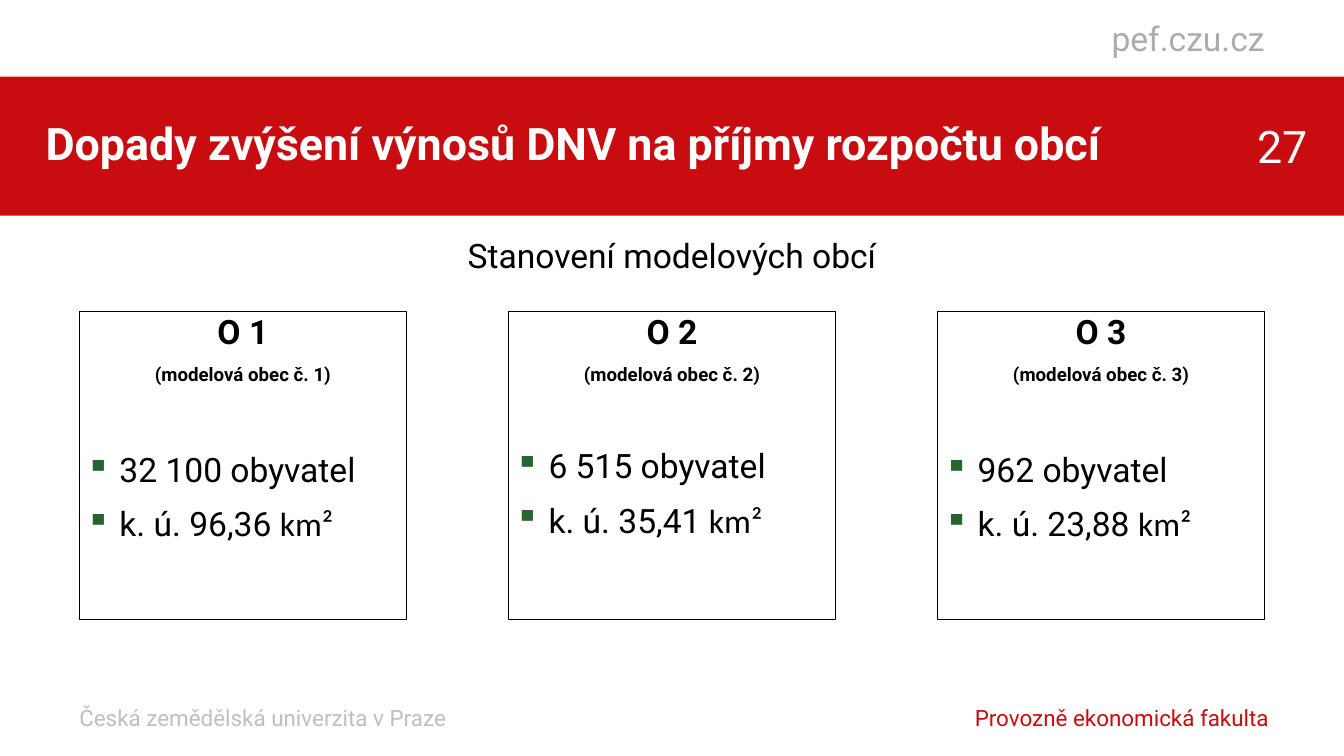
from lxml import etree
from pptx import Presentation
from pptx.dml.color import RGBColor
from pptx.enum.shapes import MSO_SHAPE
from pptx.enum.text import MSO_ANCHOR, PP_ALIGN
from pptx.oxml.ns import qn
from pptx.util import Inches, Pt

LEFT, CENTER, RIGHT = PP_ALIGN.LEFT, PP_ALIGN.CENTER, PP_ALIGN.RIGHT
TOP, MIDDLE = MSO_ANCHOR.TOP, MSO_ANCHOR.MIDDLE
RECTANGLE = MSO_SHAPE.RECTANGLE

THEME = {
    "font": "Roboto", "unit_font": "Calibri",
    "red": "C80C0F", "white": "FFFFFF", "black": "000000",
    "site": "AFABAB", "footer": "BFBFBF", "bullet": "28642D",
    "title": 48, "body": 36, "small": 24, "caption": 20,
    "line_spacing": 0.9, "space_before": 15,
}

# text, (left, top, width, height), size, colour, alignment, anchor, has margins, bold
LABELS = [
    ("pef.czu.cz", (15.48, 0, 3.34, 1.14), "body", "site", RIGHT, MIDDLE, False, False),
    ("Česká zemědělská univerzita v Praze", (1.18, 10.11, 5.85, 1.14),
     "small", "footer", LEFT, MIDDLE, False, False),
    ("Provozně ekonomická fakulta", (10.19, 10.11, 8.69, 1.14),
     "small", "red", RIGHT, MIDDLE, False, False),
    ("27", (17.63, 1.72, 1.93, 0.91), "title", "white", RIGHT, TOP, True, False),
    ("Dopady zvýšení výnosů DNV na příjmy rozpočtu obcí", (0.58, 1.14, 17.27, 2.07),
     "title", "white", LEFT, MIDDLE, True, True),
    ("Stanovení modelových obcí", (1.18, 3.51, 17.64, 0.85),
     "body", "black", CENTER, TOP, True, False),
]

# heading, caption, inhabitants, area, points above the bullets
MUNICIPALITIES = [
    ("O 1", "(modelová obec č. 1)", "32 100 obyvatel", "k. ú. 96,36 ", 68),
    ("O 2", "(modelová obec č. 2)", "6 515 obyvatel", "k. ú. 35,41 ", 64),
    ("O 3", "(modelová obec č. 3)", "962 obyvatel", "k. ú. 23,88 ", 68),
]
AREA_UNIT = "km²"
BANNER = (0, 1.14, 20, 2.07)
BOX_LEFT, BOX_TOP, BOX_WIDTH, BOX_HEIGHT = 1.18, 4.64, 4.87, 4.58
BOX_PITCH = 6.385
BULLET_INDENT = 0.5


def color(name):
    return RGBColor.from_string(THEME[name])


def style(paragraph, size, color_name="black", alignment=LEFT, bold=False):
    paragraph.alignment = alignment
    font = paragraph.font
    font.name, font.size, font.bold = THEME["font"], Pt(THEME[size]), bold
    font.color.rgb = color(color_name)


def add_label(slide, text, place, size, color_name, alignment, anchor, margins, bold):
    frame = slide.shapes.add_textbox(*map(Inches, place)).text_frame
    frame.word_wrap = True
    frame.vertical_anchor = anchor
    if not margins:
        frame.margin_left = frame.margin_right = frame.margin_top = frame.margin_bottom = 0
    paragraph = frame.paragraphs[0]
    paragraph.text = text
    paragraph.line_spacing = THEME["line_spacing"] if margins and text != "27" else 1.0
    style(paragraph, size, color_name, alignment, bold)


def add_rectangle(slide, place):
    shape = slide.shapes.add_shape(RECTANGLE, *map(Inches, place))
    shape.shadow.inherit = False
    return shape


def add_bullet(paragraph):
    """Give the paragraph a green square with a hanging indent."""
    properties = paragraph._p.get_or_add_pPr()
    properties.set("marL", str(Inches(BULLET_INDENT)))
    properties.set("indent", str(-Inches(BULLET_INDENT)))
    bullet_color = etree.SubElement(properties, qn("a:buClr"))
    etree.SubElement(bullet_color, qn("a:srgbClr"), val=THEME["bullet"])
    etree.SubElement(properties, qn("a:buChar"), char="▪")


def add_municipality(slide, left, heading, caption, inhabitants, area, bullet_gap):
    shape = add_rectangle(slide, (left, BOX_TOP, BOX_WIDTH, BOX_HEIGHT))
    shape.fill.background()
    shape.line.color.rgb = color("black")
    shape.line.width = Pt(0.75)
    frame = shape.text_frame
    frame.word_wrap = True
    frame.vertical_anchor = TOP

    gap = THEME["space_before"]
    rows = [(heading, "body", gap, False), (caption, "caption", gap, False),
            (inhabitants, "body", bullet_gap, True), (area, "body", gap, True)]
    for index, (text, size, space_before, bulleted) in enumerate(rows):
        paragraph = frame.add_paragraph() if index else frame.paragraphs[0]
        paragraph.add_run().text = text
        paragraph.space_before = Pt(space_before)
        if bulleted:
            add_bullet(paragraph)
        else:
            paragraph.line_spacing = THEME["line_spacing"]
        style(paragraph, size, alignment=LEFT if bulleted else CENTER, bold=not bulleted)
    unit = paragraph.add_run()
    unit.text = AREA_UNIT
    unit.font.name = THEME["unit_font"]


def main():
    presentation = Presentation()
    presentation.slide_width, presentation.slide_height = Inches(20), Inches(11.25)
    slide = presentation.slides.add_slide(presentation.slide_layouts[6])

    banner = add_rectangle(slide, BANNER)
    banner.fill.solid()
    banner.fill.fore_color.rgb = color("red")
    banner.line.fill.background()

    for label in LABELS:
        add_label(slide, *label)
    for index, municipality in enumerate(MUNICIPALITIES):
        add_municipality(slide, BOX_LEFT + index * BOX_PITCH, *municipality)
    presentation.save("out.pptx")


if __name__ == "__main__":
    main()
